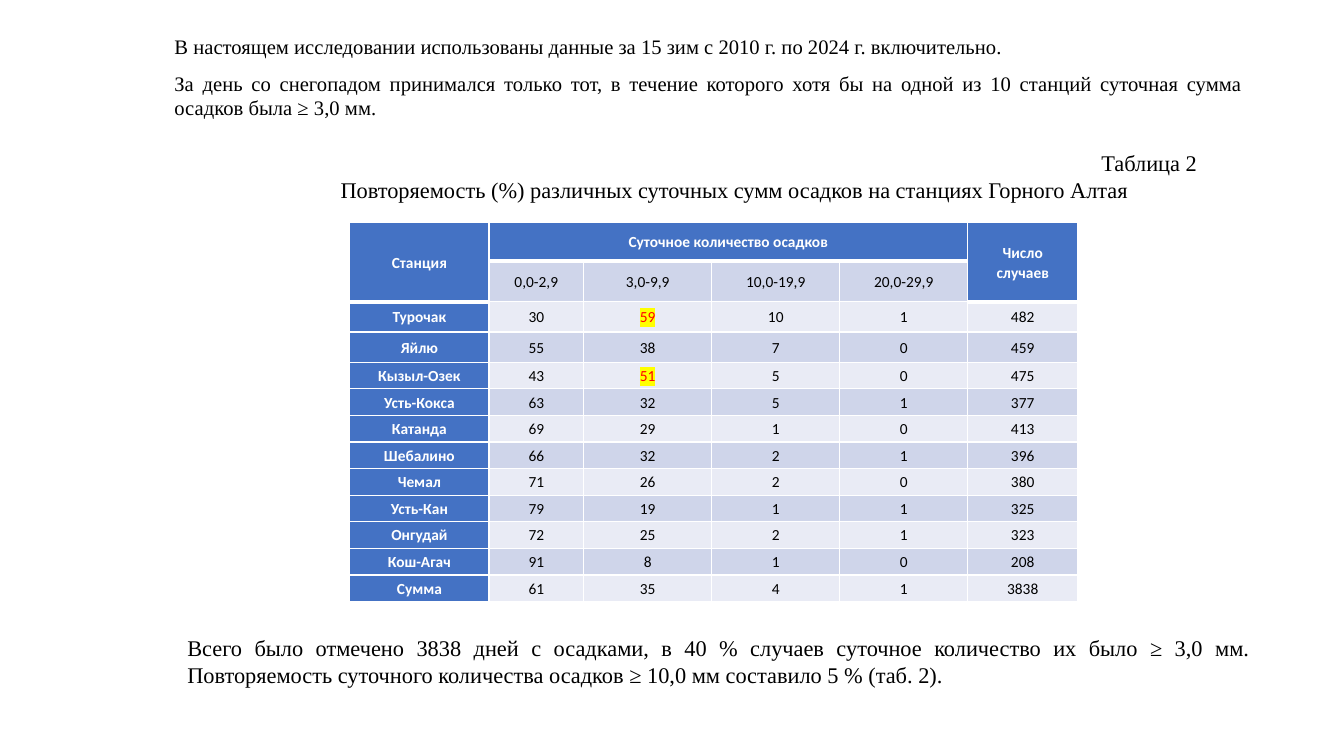
import pptx
import pptx.util
import pptx.dml.color
import pptx.enum.text
import pptx.oxml
import pptx.oxml.ns
from lxml import etree

# Content
INTRO = [
    "В настоящем исследовании использованы данные за 15 зим с 2010 г. по 2024 г. включительно.",
    "За день со снегопадом принимался только тот, в течение которого хотя бы на одной из 10 станций "
    "суточная сумма осадков была ≥ 3,0 мм.",
]
CAPTION = ["Таблица 2",
           "Повторяемость (%) различных суточных сумм осадков на станциях Горного Алтая"]
CONCLUSION = ["Всего было отмечено 3838 дней с осадками, в 40 % случаев суточное количество их было "
              "≥ 3,0 мм. Повторяемость суточного количества осадков ≥ 10,0 мм составило 5 % (таб. 2)."]
HEADER = [
    ("Станция", "Суточное количество осадков", "", "", "", "Число случаев"),
    ("", "0,0-2,9", "3,0-9,9", "10,0-19,9", "20,0-29,9", ""),
]
STATIONS = [
    ("Турочак", 30, 59, 10, 1, 482),
    ("Яйлю", 55, 38, 7, 0, 459),
    ("Кызыл-Озек", 43, 51, 5, 0, 475),
    ("Усть-Кокса", 63, 32, 5, 1, 377),
    ("Катанда", 69, 29, 1, 0, 413),
    ("Шебалино", 66, 32, 2, 1, 396),
    ("Чемал", 71, 26, 2, 0, 380),
    ("Усть-Кан", 79, 19, 1, 1, 325),
    ("Онгудай", 72, 25, 2, 1, 323),
    ("Кош-Агач", 91, 8, 1, 0, 208),
    ("Сумма", 61, 35, 4, 1, 3838),
]
HIGHLIGHTED = {("Турочак", 2), ("Кызыл-Озек", 2)}
MERGES = [((0, 0), (1, 0)), ((0, 1), (0, 4)), ((0, 5), (1, 5))]

# Layout in inches
COLUMNS = [1.38, 0.94, 1.27, 1.27, 1.27, 1.09]
ROWS = [0.38, 0.4, 0.3, 0.3] + [0.264] * 9
BLUE, DARK_BAND, LIGHT_BAND = "4472C4", "CFD5EA", "E9EBF5"
WHITE, BLACK, RED, YELLOW = "FFFFFF", "000000", "FF0000", "FFFF00"

Inches, Pt = pptx.util.Inches, pptx.util.Pt
ALIGN = pptx.enum.text.PP_ALIGN
qn = pptx.oxml.ns.qn


def color(value):
    return pptx.dml.color.RGBColor.from_string(value)


def style(paragraph, align, size, font, ink=BLACK, bold=False):
    paragraph.alignment = align
    for run in paragraph.runs:
        run.font.size = Pt(size)
        run.font.name = font
        run.font.bold = bold
        run.font.color.rgb = color(ink)


def write(frame, lines, aligns, size, left=0, first=0):
    frame.word_wrap = True
    frame.text = "\n".join(lines)
    for paragraph, align in zip(frame.paragraphs, aligns):
        style(paragraph, align, size, "Times New Roman")
        props = paragraph._p.get_or_add_pPr()
        props.set("marL", str(Inches(left)))
        props.set("indent", str(Inches(first)))
        etree.SubElement(props, qn("a:buNone"))


def border(cell, thick_sides):
    props = cell._tc.get_or_add_tcPr()
    for place, side in enumerate("LRTB"):
        line = etree.Element(qn(f"a:ln{side}"), w=str(Pt(3 if side in thick_sides else 1)))
        fill = etree.SubElement(line, qn("a:solidFill"))
        etree.SubElement(fill, qn("a:srgbClr"), val=WHITE)
        props.insert(place, line)


def highlight(run):
    mark = etree.Element(qn("a:highlight"))
    etree.SubElement(mark, qn("a:srgbClr"), val=YELLOW)
    run._r.rPr.find(qn("a:solidFill")).addnext(mark)


def place(shape, left, top, width, height):
    shape.left, shape.top = Inches(left), Inches(top)
    shape.width, shape.height = Inches(width), Inches(height)


deck = pptx.Presentation()
deck.slide_width, deck.slide_height = Inches(13.33), Inches(7.5)
slide = deck.slides.add_slide(deck.slide_layouts[1])
title = slide.shapes.title
title._element.getparent().remove(title._element)

# Introduction
intro = slide.placeholders[1]
place(intro, 1.38, 0.3, 11.04, 1)
write(intro.text_frame, INTRO, [ALIGN.JUSTIFY] * 2, 14.7, left=0.25)
intro.text_frame.auto_size = pptx.enum.text.MSO_AUTO_SIZE.NONE
for paragraph in intro.text_frame.paragraphs:
    paragraph.line_spacing = 0.95
    paragraph.space_before = Pt(10)

# Precipitation table
grid = HEADER + STATIONS
precipitation = slide.shapes.add_table(
    len(ROWS), len(COLUMNS), Inches(3.47), Inches(2.21),
    Inches(sum(COLUMNS)), Inches(sum(ROWS))).table
for column, width in zip(precipitation.columns, COLUMNS):
    column.width = Inches(width)
for row, height in zip(precipitation.rows, ROWS):
    row.height = Inches(height)

for r, values in enumerate(grid):
    for c, value in enumerate(values):
        cell = precipitation.cell(r, c)
        marked = (values[0], c) in HIGHLIGHTED
        heading = r == 0 or c == 0 or (r == 1 and c == 5)
        cell.text = str(value)
        cell.vertical_anchor = pptx.enum.text.MSO_ANCHOR.MIDDLE
        cell.margin_left = cell.margin_right = Inches(0.07)
        cell.margin_top = cell.margin_bottom = 0
        cell.fill.solid()
        cell.fill.fore_color.rgb = color(BLUE if heading else DARK_BAND if r % 2 else LIGHT_BAND)
        paragraph = cell.text_frame.paragraphs[0]
        paragraph.line_spacing = 1.07
        paragraph.space_after = Pt(8)
        style(paragraph, ALIGN.CENTER, 11, "Calibri",
              WHITE if heading else RED if marked else BLACK, heading)
        if marked:
            highlight(paragraph.runs[0])
        # Thick rule under the header cells
        under_header = r == 0 or (r == 1 and c in (0, 5))
        below_header = (r == 1 and 0 < c < 5) or (r == 2 and c in (0, 5))
        border(cell, "B" if under_header else "T" if below_header else "")
for start, end in MERGES:
    precipitation.cell(*start).merge(precipitation.cell(*end))

# Table caption and conclusion
for lines, aligns, box, first in [
    (CAPTION, [ALIGN.RIGHT, ALIGN.CENTER], (2.11, 1.43, 9.86, 0.64), 0.49),
    (CONCLUSION, [ALIGN.JUSTIFY], (1.76, 6.24, 10.74, 0.64), 0),
]:
    note = slide.shapes.add_textbox(*map(Inches, box))
    write(note.text_frame, lines, aligns, 16, first=first)
    note.text_frame.auto_size = pptx.enum.text.MSO_AUTO_SIZE.SHAPE_TO_FIT_TEXT

deck.save("out.pptx")
